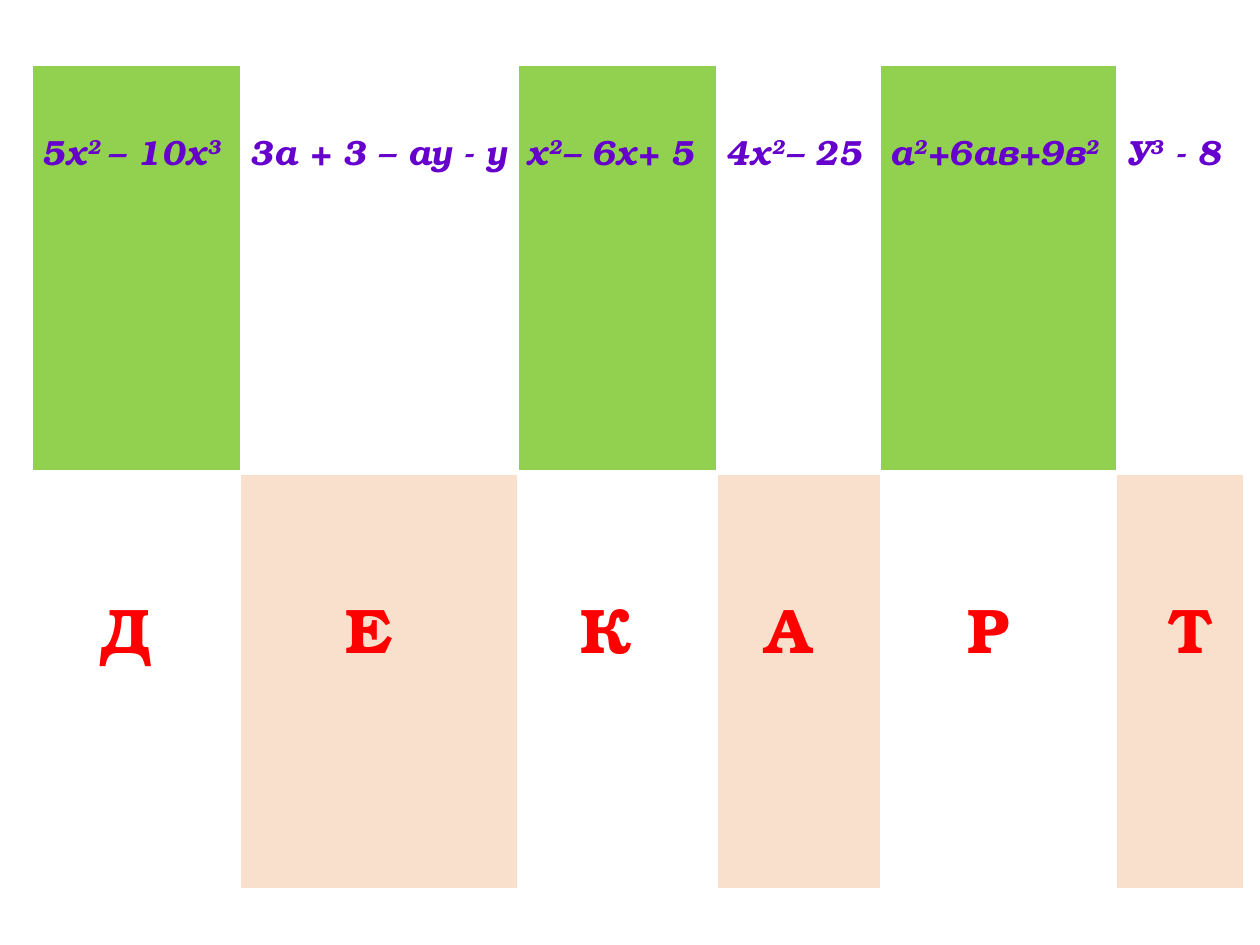
from dataclasses import dataclass

from lxml.etree import SubElement
from pptx import Presentation
from pptx.dml.color import RGBColor
from pptx.enum.text import PP_ALIGN
from pptx.oxml.ns import qn
from pptx.util import Inches, Pt


@dataclass(frozen=True)
class Theme:
    font: str = "TeX Gyre Bonum"
    white: str = "FFFFFF"
    line_spacing: float = 1.15
    side_margin: float = 0.07


@dataclass(frozen=True)
class RowStyle:
    height: float
    fills: tuple[str, str]  # even columns, odd columns
    size: int
    color: str
    italic: bool
    align: PP_ALIGN
    top_margin: float
    bottom_border: int


THEME = Theme()
EXPRESSION_ROW = RowStyle(3.23, ("92D050", THEME.white), 20, "6600CC", True,
                          PP_ALIGN.LEFT, 0.41, 3)
LETTER_ROW = RowStyle(3.3, (THEME.white, "F9E0CD"), 36, "FF0000", False,
                      PP_ALIGN.CENTER, 0.75, 1)
COLUMN_WIDTHS = (1.65, 2.2, 1.58, 1.3, 1.87, 1.01)

# Spans alternate between normal text and superscript.
EXPRESSIONS = (
    ("5х", "2 ", "– 10х", "3"),
    ("3а + 3 – ау - у",),
    ("х", "2", "– 6х+ 5"),
    ("4х", "2", "– 25"),
    ("а", "2", "+6ав+9в", "2"),
    ("У", "3", " - 8"),
)
LETTERS = (("Д ",), ("Е ",), ("К ",), ("А ",), ("Р ",), (" Т",))


def set_borders(cell, bottom: int) -> None:
    """Draw white borders; they must precede the fill in the cell properties."""
    properties = cell._tc.get_or_add_tcPr()
    for side, width in {"L": 1, "R": 1, "T": 1, "B": bottom}.items():
        line = SubElement(properties, qn(f"a:ln{side}"), w=str(Pt(width)))
        fill = SubElement(line, qn("a:solidFill"))
        SubElement(fill, qn("a:srgbClr"), val=THEME.white)


def write_spans(para, spans: tuple[str, ...], style: RowStyle) -> None:
    font_values = {"name": THEME.font, "size": Pt(style.size),
                   "bold": True, "italic": style.italic}
    for index, text in enumerate(spans):
        span = para.add_run()
        span.text = text
        for name, value in font_values.items():
            setattr(span.font, name, value)
        span.font.color.rgb = RGBColor.from_string(style.color)
        if index % 2:
            span.font._element.set("baseline", "30000")


def fill_cell(cell, spans: tuple[str, ...], style: RowStyle, fill: str) -> None:
    set_borders(cell, style.bottom_border)
    cell.fill.solid()
    cell.fill.fore_color.rgb = RGBColor.from_string(fill)
    margins = {"margin_left": THEME.side_margin, "margin_right": THEME.side_margin,
               "margin_top": style.top_margin, "margin_bottom": 0}
    for name, value in margins.items():
        setattr(cell, name, Inches(value))
    para = cell.text_frame.paragraphs[0]
    para.alignment = style.align
    para.line_spacing = THEME.line_spacing
    write_spans(para, spans, style)


def add_answer_table(page) -> None:
    rows = ((EXPRESSION_ROW, EXPRESSIONS), (LETTER_ROW, LETTERS))
    height = sum(style.height for style, _ in rows)
    table = page.shapes.add_table(
        len(rows), len(COLUMN_WIDTHS), Inches(0.26), Inches(0.52),
        Inches(sum(COLUMN_WIDTHS)), Inches(height)).table
    table.first_row = table.horz_banding = False
    for column, width in zip(table.columns, COLUMN_WIDTHS):
        column.width = Inches(width)
    for row, (style, entries) in zip(table.rows, rows):
        row.height = Inches(style.height)
        for index, (cell, spans) in enumerate(zip(row.cells, entries)):
            fill_cell(cell, spans, style, style.fills[index % 2])


def main() -> None:
    deck = Presentation()
    deck.slide_width, deck.slide_height = Inches(10), Inches(7.5)
    page = deck.slides.add_slide(deck.slide_layouts[6])
    add_answer_table(page)
    deck.save("out.pptx")


if __name__ == "__main__":
    main()
